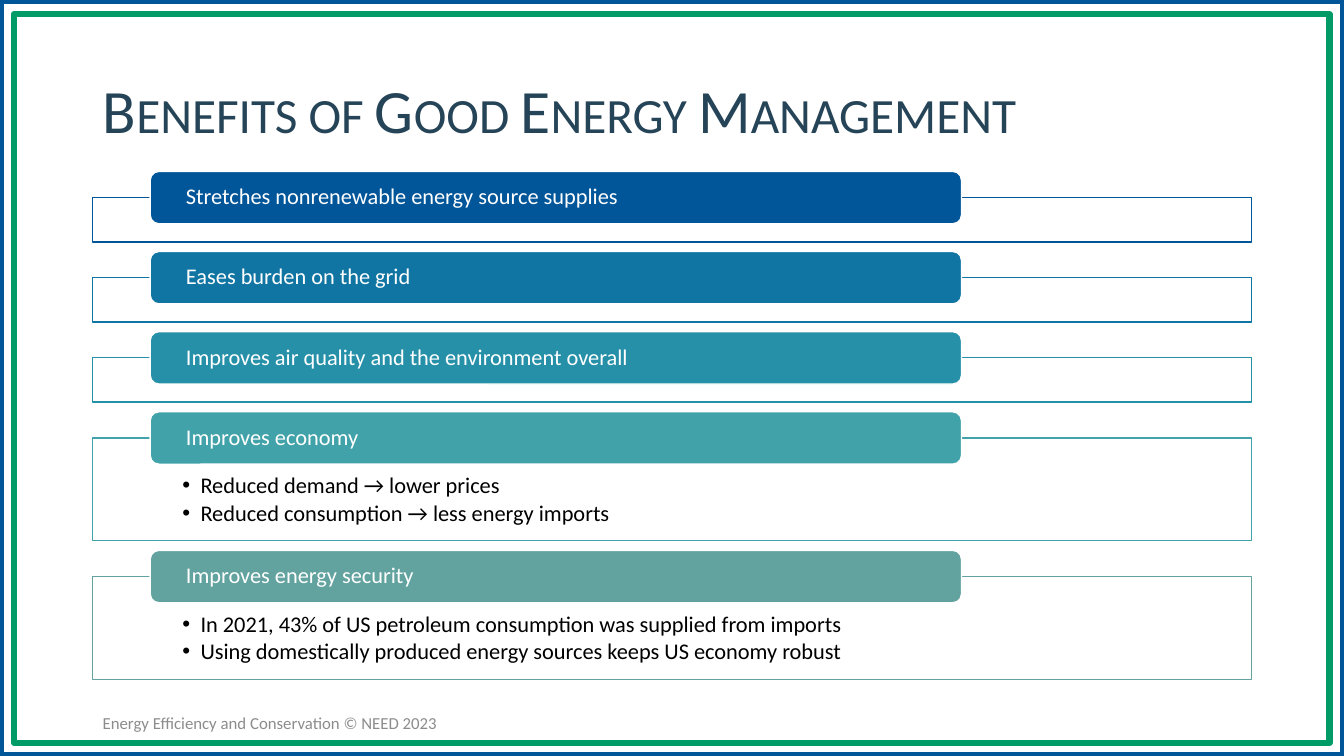
import pptx
import pptx.util
import pptx.dml.color
import pptx.enum.shapes
import pptx.enum.text
import pptx.oxml.ns
from lxml import etree

KIND = pptx.enum.shapes.MSO_SHAPE
ANCHOR = pptx.enum.text.MSO_ANCHOR
LEFT = pptx.enum.text.PP_ALIGN.LEFT
SCALE = 914400 // 200
WIDE, HIGH = 2667, 1500

PILL, DROP, GAP = 104, 52, 19
SHORT, TALL = 88, 204
ITEMS = [
    ("005699", "Stretches nonrenewable energy source supplies", []),
    ("1175A3", "Eases burden on the grid", []),
    ("2690A9", "Improves air quality and the environment overall", []),
    ("41A3A9", "Improves economy", [
        "Reduced demand → lower prices",
        "Reduced consumption → less energy imports"]),
    ("62A39F", "Improves energy security", [
        "In 2021, 43% of US petroleum consumption was supplied from imports",
        "Using domestically produced energy sources keeps US economy robust"]),
]


def px(num):
    return pptx.util.Emu(num * SCALE)


def color(code):
    return pptx.dml.color.RGBColor.from_string(code)


def add(node, tag, **attrs):
    return etree.SubElement(node, pptx.oxml.ns.qn(tag), attrs)


def block(slide, kind, box, line, width, fill=None):
    """Add an outlined shape, unfilled unless a fill colour is given."""
    shape = slide.shapes.add_shape(kind, *map(px, box))
    shape.shadow.inherit = False
    shape.line.color.rgb = color(line)
    shape.line.width = pptx.util.Pt(width)
    if fill:
        shape.fill.solid()
        shape.fill.fore_color.rgb = color(fill)
    else:
        shape.fill.background()
    return shape


def setup(frame, anchor, side=20, top=10, low=10):
    """Set wrapping, anchor and insets of a text frame."""
    frame.word_wrap = True
    frame.auto_size = pptx.enum.text.MSO_AUTO_SIZE.NONE
    frame.vertical_anchor = anchor
    frame.margin_left = frame.margin_right = px(side)
    frame.margin_top, frame.margin_bottom = px(top), px(low)


def write(para, text, size, code, space=0.9):
    para.alignment = LEFT
    para.line_spacing = space
    run = para.add_run()
    run.text = text
    run.font.name = "Calibri"
    run.font.size = pptx.util.Pt(size)
    run.font.color.rgb = color(code)
    return run


def border(slide, box):
    """Draw the double frame around the slide."""
    x, y, w, h = box
    block(slide, KIND.RECTANGLE, box, "005699", 6)
    block(slide, KIND.RECTANGLE, (x + 28, y + 28, w - 57, h - 54), "009B67", 4.5)


def heading(slide, box):
    title = slide.shapes.title
    title.left, title.top, title.width, title.height = map(px, box)
    setup(title.text_frame, ANCHOR.MIDDLE)
    run = write(title.text_frame.paragraphs[0],
                "Benefits of Good Energy Management", 44, "264457")
    run.font._element.set("cap", "small")


def points(frame, lines):
    """Fill a frame with bulleted lines."""
    setup(frame, ANCHOR.TOP, 178, 72, 24)
    for num, text in enumerate(lines):
        para = frame.add_paragraph() if num else frame.paragraphs[0]
        para.space_after = pptx.util.Pt(2.4)
        props = para._p.get_or_add_pPr()
        props.set("marL", str(px(36)))
        props.set("indent", str(px(-36)))
        add(props, "a:buFont", typeface="Arial")
        add(props, "a:buChar", char="•")
        write(para, text, 16, "000000")


def benefit(slide, box, code, label, lines):
    """Draw one outlined panel with its label pill on the top edge."""
    x, y, w, h = box
    panel = block(slide, KIND.RECTANGLE, (x, y + DROP, w, h - DROP),
                  code, 1, "FFFFFF")
    tint = panel.fill._xPr.find(".//" + pptx.oxml.ns.qn("a:srgbClr"))
    add(tint, "a:alpha", val="90000")
    if lines:
        points(panel.text_frame, lines)
    pill = block(slide, KIND.ROUNDED_RECTANGLE, (x + 114, y, 1610, PILL),
                 "FFFFFF", 1, code)
    setup(pill.text_frame, ANCHOR.MIDDLE, 66, 0, 0)
    write(pill.text_frame.paragraphs[0], label, 16, "FFFFFF")


def stack(slide, box):
    """Stack the benefits downward with equal gaps."""
    x, y, w, _ = box
    for code, label, lines in ITEMS:
        h = DROP + (TALL if lines else SHORT)
        benefit(slide, (x, y, w, h), code, label, lines)
        y += h + GAP


def footer(slide, box):
    frame = slide.shapes.add_textbox(*map(px, box)).text_frame
    setup(frame, ANCHOR.MIDDLE)
    write(frame.paragraphs[0], "Energy Efficiency and Conservation © NEED 2023",
          12, "8C8C8C", 1.0)


def main():
    deck = pptx.Presentation()
    deck.slide_width, deck.slide_height = px(WIDE), px(HIGH)
    slide = deck.slides.add_slide(deck.slide_layouts[5])
    border(slide, (0, 0, WIDE, HIGH))
    heading(slide, (184, 80, 2300, 290))
    stack(slide, (184, 340, 2300, 1006))
    footer(slide, (184, 1394, 1358, 80))
    deck.save("out.pptx")


if __name__ == "__main__":
    main()
